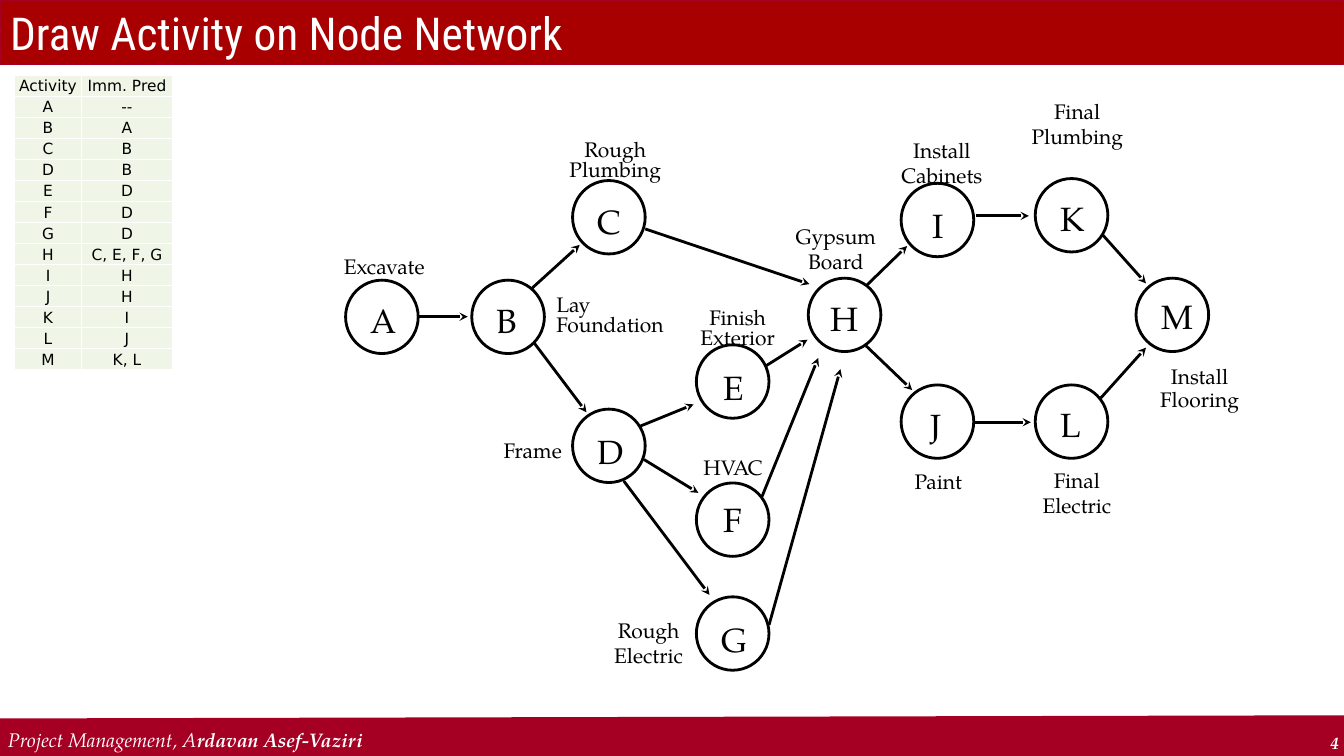
from lxml import etree
from pptx import Presentation
from pptx.dml.color import RGBColor
from pptx.enum.shapes import MSO_CONNECTOR, MSO_SHAPE
from pptx.enum.text import MSO_ANCHOR, MSO_AUTO_SIZE, PP_ALIGN
from pptx.oxml.ns import qn
from pptx.util import Cm, Pt

LEFT, MID, RIGHT = PP_ALIGN.LEFT, PP_ALIGN.CENTER, PP_ALIGN.RIGHT
MIDDLE, BOTTOM, TOP = MSO_ANCHOR.MIDDLE, MSO_ANCHOR.BOTTOM, MSO_ANCHOR.TOP
FIT, FIXED = MSO_AUTO_SIZE.SHAPE_TO_FIT_TEXT, MSO_AUTO_SIZE.NONE
OVAL, RECT, STRAIGHT = MSO_SHAPE.OVAL, MSO_SHAPE.RECTANGLE, MSO_CONNECTOR.STRAIGHT

BLACK = RGBColor(0x00, 0x00, 0x00)
WHITE = RGBColor(0xFF, 0xFF, 0xFF)
RED = RGBColor(0xA8, 0x00, 0x00)
WINE = RGBColor(0xA5, 0x00, 0x23)
PALE = RGBColor(0xEF, 0xF6, 0xE7)
SERIF, SANS, HEAD = "TeX Gyre Pagella", "DejaVu Sans", "Roboto Condensed"

NODES = {
    "A": (8.71, 7.06, 0.38, 0.38),
    "B": (11.89, 7.06, 0.38, 0.38),
    "C": (14.43, 4.55, 0.38, 0.38),
    "D": (14.43, 10.31, 0.38, 0.43),
    "E": (17.55, 8.69, 0.43, 0.43),
    "F": (17.55, 12.17, 0.43, 0.28),
    "G": (17.55, 15.04, 0.38, 0.43),
    "H": (20.37, 7.01, 0.3, 0.38),
    "I": (22.71, 4.62, 0.51, 0.41),
    "J": (22.71, 9.7, 0.46, 0.38),
    "K": (26.09, 4.5, 0.38, 0.36),
    "L": (26.09, 9.7, 0.38, 0.36),
    "M": (28.63, 7.01, 0.38, 0.33),
}
EDGES = {
    "AB": (10.57, 7.98, 11.79, 7.98),
    "BC": (13.41, 7.26, 14.61, 6.17),
    "BD": (13.46, 8.64, 14.78, 10.39),
    "DE": (16.13, 10.74, 17.48, 10.19),
    "DF": (16.23, 11.58, 17.6, 12.42),
    "DG": (15.72, 12.12, 17.88, 14.99),
    "CH": (16.26, 5.77, 20.4, 7.16),
    "EH": (19.3, 9.22, 20.35, 8.56),
    "FH": (19.2, 12.52, 20.62, 9.02),
    "GH": (19.38, 15.75, 21.18, 9.3),
    "HI": (21.84, 7.19, 22.86, 6.2),
    "HJ": (21.82, 8.71, 22.99, 9.83),
    "IK": (24.59, 5.44, 25.93, 5.44),
    "JL": (24.56, 10.64, 25.98, 10.64),
    "KM": (27.79, 5.92, 28.88, 7.14),
    "LM": (27.74, 10.03, 28.88, 8.76),
}
LABELS = [
    ("Excavate", (8.2, 6.27, 2.97, 0.89), 1, MID),
    ("Lay Foundation", (13.77, 7.34, 3.73, 1.3), 0.8, LEFT),
    ("Rough Plumbing", (13.64, 3.43, 3.73, 1.3), 0.8, MID),
    ("Frame", (11.94, 10.9, 2.97, 0.89), 1, MID),
    ("Finish Exterior", (17.22, 7.67, 2.74, 1.3), 0.8, MID),
    ("HVAC", (16.99, 11.33, 2.97, 0.89), 1, MID),
    ("Rough Electric", (14.86, 15.44, 2.97, 1.55), 1, MID),
    ("Gypsum Board", (19.58, 5.51, 2.97, 1.55), 1, MID),
    ("Install Cabinets", (22.25, 3.33, 2.97, 1.55), 1, MID),
    ("Paint", (22.58, 11.68, 2.13, 0.89), 1, MID),
    ("Final Plumbing", (25.32, 2.36, 3.66, 1.55), 1, MID),
    ("Final Electric", (25.68, 11.66, 2.92, 1.55), 1, MID),
    ("Install\nFlooring", (28.91, 9.3, 2.64, 1.3), 0.5, MID),
]


class Board:
    """Draws styled elements on one slide, with lengths in centimetres."""

    def __init__(self, slide):
        self.slide = slide
        self.shapes = slide.shapes

    def font(self, para, size, color=BLACK, name=SERIF):
        font = para.font
        font.name, font.size, font.color.rgb = name, Pt(size), color
        return font

    def shape(self, kind, box, fill, line, width):
        item = self.shapes.add_shape(kind, *map(Cm, box))
        item.shadow.inherit = False
        if fill is None:
            item.fill.background()
        else:
            item.fill.solid()
            item.fill.fore_color.rgb = fill
        item.line.color.rgb, item.line.width = line, Pt(width)
        return item

    def title(self, text, box):
        head = self.shapes.title
        head.left, head.top, head.width, head.height = map(Cm, box)
        head.line.color.rgb, head.line.width = WINE, Pt(0.75)
        frame = head.text_frame
        frame.text, frame.auto_size = text, FIXED
        frame.vertical_anchor = MIDDLE
        para = frame.paragraphs[0]
        para.alignment = LEFT
        self.font(para, 32.4, WHITE, HEAD)
        band = self.shape(RECT, (0, -0.03, 33.87, 1.63), RED, RED, 0.75)
        head.element.addprevious(band.element)

    def text(self, text, box, size, align=MID, space=1, color=BLACK, anchor=TOP):
        frame = self.shapes.add_textbox(*map(Cm, box)).text_frame
        frame.text, frame.word_wrap, frame.auto_size = text, True, FIT
        frame.vertical_anchor = anchor
        for rank, para in enumerate(frame.paragraphs):
            para.alignment, para.line_spacing = align, space
            para.space_before = Pt(size / 2 if rank else 0)
            self.font(para, size, color)
        return frame.paragraphs[0]

    def line(self, ends, color=BLACK, width=2, arrow=True):
        link = self.shapes.add_connector(STRAIGHT, *map(Cm, ends))
        link.line.color.rgb, link.line.width = color, Pt(width)
        props = link.element.spPr
        if arrow:
            etree.SubElement(props.find(qn("a:ln")), qn("a:tailEnd"), type="stealth")
        etree.SubElement(props, qn("a:effectLst"))

    def node(self, name, left, top, right, down):
        self.shape(OVAL, (left, top, 1.83, 1.85), None, BLACK, 2)
        self.text(name, (left + right, top + down, 0.84, 1.3), 24)

    def cell(self, cell, text):
        props = cell._tc.get_or_add_tcPr()
        for side in ("a:lnL", "a:lnR", "a:lnT", "a:lnB"):
            edge = etree.SubElement(props, qn(side), w=str(Pt(1)))
            fill = etree.SubElement(edge, qn("a:solidFill"))
            etree.SubElement(fill, qn("a:srgbClr"), val=str(WHITE))
        cell.fill.solid()
        cell.fill.fore_color.rgb = PALE
        cell.margin_left = cell.margin_right = cell.margin_top = Cm(0.03)
        cell.margin_bottom = 0
        cell.vertical_anchor = MIDDLE
        cell.text = text
        para = cell.text_frame.paragraphs[0]
        para.alignment = MID
        self.font(para, 11, name=SANS)

    def table(self, rows, left, top, widths, height):
        size = (left, top, sum(widths), height * len(rows))
        grid = self.shapes.add_table(len(rows), len(widths), *map(Cm, size)).table
        for col, width in zip(grid.columns, widths):
            col.width = Cm(width)
        for row, texts in zip(grid.rows, rows):
            row.height = Cm(height)
            for cell, text in zip(row.cells, texts):
                self.cell(cell, text)


def main():
    """Build the activity network slide."""
    deck = Presentation()
    deck.slide_width, deck.slide_height = Cm(33.87), Cm(19.05)
    board = Board(deck.slides.add_slide(deck.slide_layouts[5]))
    board.title("Draw Activity on Node Network", (0, 0, 33.87, 1.63))

    board.line((-0.03, 18.62, 33.93, 18.54), WINE, 29.25, False)
    page = board.text("4", (31.45, 18.34, 2.54, 0.76), 12, RIGHT, color=WHITE)
    page.font.bold = page.font.italic = True
    foot = board.text("Project Management, A", (-0.05, 18.19, 26.54, 0.86), 14,
                      LEFT, color=WHITE, anchor=BOTTOM)
    foot.font.italic = True
    name = foot.add_run()
    name.text, name.font.bold = "rdavan Asef-Vaziri", True

    for letter, place in NODES.items():
        board.node(letter, *place)
    for ends in EDGES.values():
        board.line(ends)
    for text, box, space, align in LABELS:
        board.text(text, box, 15, align, space)

    rows = [("Activity", "Imm. Pred")]
    for letter in NODES:
        before = [start for start, end in EDGES if end == letter]
        rows.append((letter, ", ".join(before) or "--"))
    board.table(rows, 0.36, 1.9, (1.7, 2.28), 0.53)
    deck.save("out.pptx")


if __name__ == "__main__":
    main()
